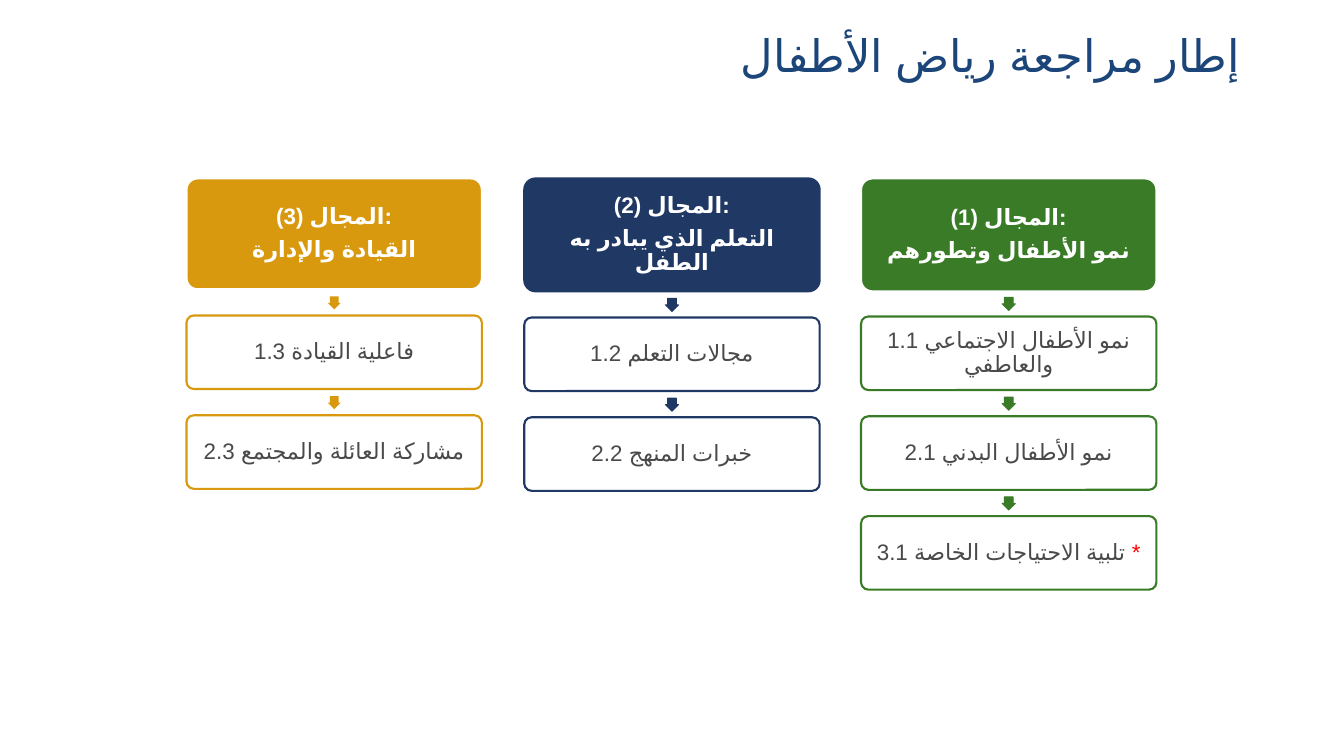
import pptx
import pptx.dml.color
import pptx.enum.lang
import pptx.enum.shapes
import pptx.enum.text
import pptx.oxml.ns
import pptx.util

EMU_PER_PX = 9144  # 100 px to the inch

COLORS = {
    "title": "1C4679",
    "text": "4A4A4A",
    "white": "FFFFFF",
    "marker": "FF0000",
    "green": "397B26",
    "navy": "203864",
    "gold": "D9990E",
}

BOX_WIDTH = 293
HEADER_TOP = 177
STEP_HEIGHT = 73
STEP_PITCH = 99
ARROW_SIZE = 13
ARROW_RISE = 19  # from the top of an arrow to the top of the box below it

# Each column: left, header height, first step top, colour, header outline,
# whether arrows are outlined, header lines, steps
COLUMNS = [
    (854, 112, 314, "green", "white", True,
     ["المجال (1):", "نمو الأطفال وتطورهم"],
     ["1.1 نمو الأطفال الاجتماعي والعاطفي", "2.1 نمو الأطفال البدني",
      "3.1 تلبية الاحتياجات الخاصة *"]),
    (520, 112, 315, "navy", "navy", True,
     ["المجال (2):", "التعلم الذي يبادر به الطفل"],
     ["1.2 مجالات التعلم", "2.2 خبرات المنهج"]),
    (185, 110, 313, "gold", "white", False,
     ["المجال (3):", "القيادة والإدارة"],
     ["1.3 فاعلية القيادة", "2.3 مشاركة العائلة والمجتمع"]),
]


def px(length):
    return pptx.util.Emu(length * EMU_PER_PX)


def rgb(name):
    return pptx.dml.color.RGBColor.from_string(COLORS[name])


def format_run(run, size, color, font_name, bold=False):
    """Format an Arabic run, naming the font for Arabic script as well as Latin."""
    run.font.language_id = pptx.enum.lang.MSO_LANGUAGE_ID.ARABIC
    run.font.size = pptx.util.Pt(size)
    run.font.bold = bold
    run.font.name = font_name
    run.font.color.rgb = rgb(color)
    properties = run.font._element
    complex_font = properties.makeelement(
        pptx.oxml.ns.qn("a:cs"), {"typeface": font_name})
    properties.append(complex_font)


def add_title(slide, text):
    box = slide.shapes.add_textbox(px(125), px(17), px(1115), px(81))
    frame = box.text_frame
    frame.word_wrap = True
    frame.vertical_anchor = pptx.enum.text.MSO_ANCHOR.MIDDLE
    frame.text = text
    paragraph = frame.paragraphs[0]
    paragraph.alignment = pptx.enum.text.PP_ALIGN.RIGHT
    paragraph.line_spacing = 0.9
    paragraph._p.get_or_add_pPr().set("rtl", "1")
    format_run(paragraph.runs[0], 32, "title", "Quicksand")


def add_filled_shape(slide, kind, left, top, width, height, fill, line, line_width):
    shape = slide.shapes.add_shape(kind, px(left), px(top), px(width), px(height))
    shape.shadow.inherit = False
    shape.fill.solid()
    shape.fill.fore_color.rgb = rgb(fill)
    if line:
        shape.line.color.rgb = rgb(line)
        shape.line.width = pptx.util.Pt(line_width)
    else:
        shape.line.fill.background()
    return shape


def add_box(slide, left, top, height, fill, line, lines, color, bold=False):
    """Add a rounded box of centred lines; a trailing * is set in the marker colour."""
    box = add_filled_shape(
        slide, pptx.enum.shapes.MSO_SHAPE.ROUNDED_RECTANGLE,
        left, top, BOX_WIDTH, height, fill, line, 1.5)
    box.adjustments[0] = 0.1
    frame = box.text_frame
    frame.word_wrap = True
    frame.vertical_anchor = pptx.enum.text.MSO_ANCHOR.MIDDLE
    frame.margin_left = frame.margin_right = px(4)
    frame.margin_top = frame.margin_bottom = px(4)
    frame.text = "\n".join(lines)
    for paragraph, line_text in zip(frame.paragraphs, lines):
        paragraph.alignment = pptx.enum.text.PP_ALIGN.CENTER
        paragraph.line_spacing = 0.9
        paragraph.space_after = pptx.util.Pt(6)
        label, marker, _ = line_text.partition("*")
        paragraph.runs[0].text = label
        format_run(paragraph.runs[0], 16, color, "Arial", bold)
        if marker:
            marker_run = paragraph.add_run()
            marker_run.text = marker
            format_run(marker_run, 16, "marker", "Arial", bold)


def add_arrow(slide, center, top, color, outlined):
    arrow = add_filled_shape(
        slide, pptx.enum.shapes.MSO_SHAPE.DOWN_ARROW,
        center - ARROW_SIZE // 2, top, ARROW_SIZE, ARROW_SIZE,
        color, color if outlined else None, 0.75)
    arrow.adjustments[0] = 0.67
    arrow.adjustments[1] = 0.5


def add_column(slide, left, header_height, first_top, color, header_line,
               arrow_outlined, header, steps):
    add_box(slide, left, HEADER_TOP, header_height, color, header_line,
            header, "white", bold=True)
    for index, step in enumerate(steps):
        top = first_top + index * STEP_PITCH
        add_arrow(slide, left + BOX_WIDTH // 2, top - ARROW_RISE, color, arrow_outlined)
        add_box(slide, left, top, STEP_HEIGHT, "white", color, [step], "text")


def main():
    presentation = pptx.Presentation()
    presentation.slide_width = px(1333)
    presentation.slide_height = px(750)
    slide = presentation.slides.add_slide(presentation.slide_layouts[6])
    add_title(slide, "إطار مراجعة رياض الأطفال")
    for column in COLUMNS:
        add_column(slide, *column)
    presentation.save("out.pptx")


if __name__ == "__main__":
    main()
